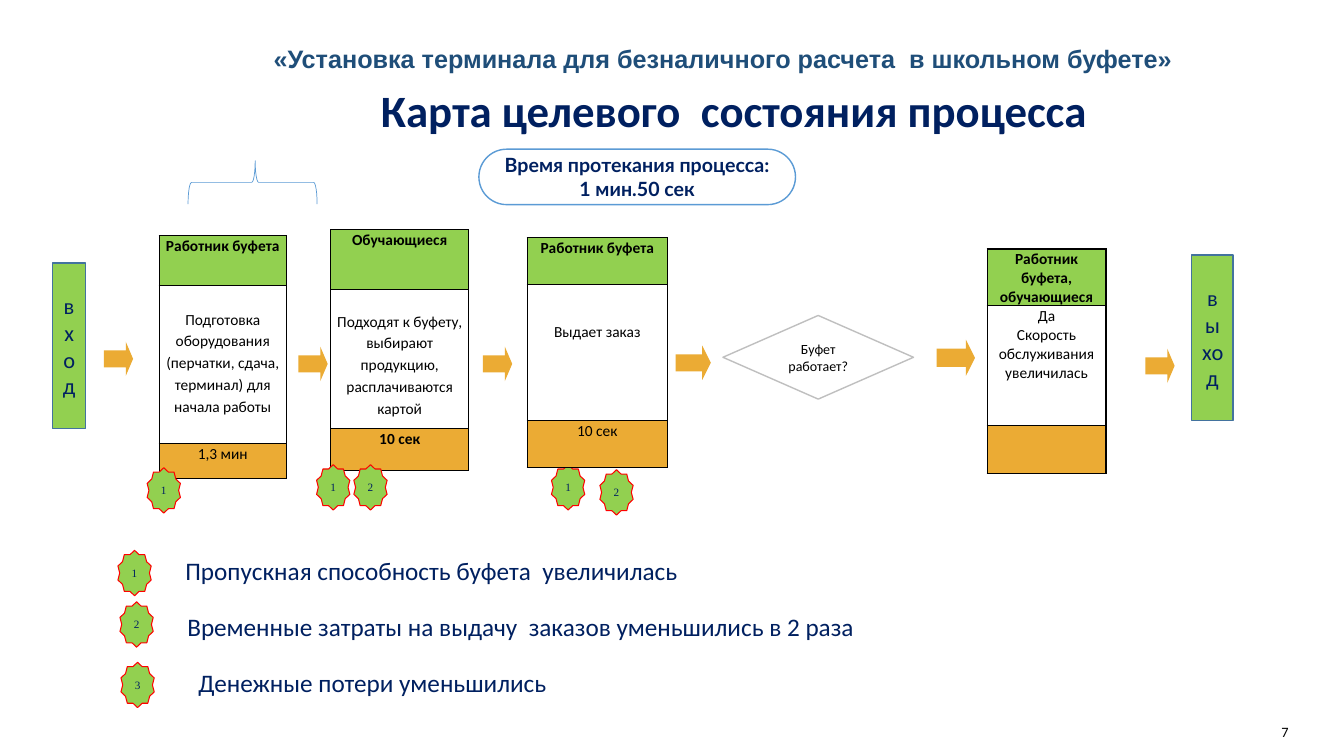
from lxml.etree import SubElement as Sub
from pptx import Presentation as Deck
from pptx.dml.color import RGBColor as RGB
from pptx.enum.shapes import MSO_SHAPE as Kind
from pptx.enum.text import MSO_ANCHOR as Anchor, PP_ALIGN as Align
from pptx.oxml.ns import qn
from pptx.util import Inches, Pt

NAVY = RGB(0x00, 0x20, 0x60)
STEEL = RGB(0x1F, 0x4E, 0x79)
BLUE = RGB(0x5B, 0x9B, 0xD5)
EDGE = RGB(0x43, 0x73, 0x9E)
GREEN = RGB(0x92, 0xD0, 0x50)
GOLD = RGB(0xEB, 0xAB, 0x34)
GREY = RGB(0xBF, 0xBF, 0xBF)
RED = RGB(0xFF, 0x00, 0x00)
WHITE = RGB(0xFF, 0xFF, 0xFF)
BLACK = RGB(0x00, 0x00, 0x00)


def write(para, text, size, color, font="Calibri", bold=False, align=Align.LEFT):
    para.alignment = align
    run = para.add_run()
    run.text = text
    run.font.name = font
    run.font.size = Pt(size)
    run.font.bold = bold
    run.font.color.rgb = color


def add_text(slide, box, text, size, color, wrap=True, **style):
    frame = slide.shapes.add_textbox(*map(Inches, box)).text_frame
    frame.word_wrap = wrap
    write(frame.paragraphs[0], text, size, color, **style)
    return frame


def set_pad(frame, pad):
    frame.margin_left = frame.margin_right = Inches(pad)
    frame.margin_top = frame.margin_bottom = Inches(pad)


def add_shape(slide, kind, box, fill=None, line=None, width=1, adjust=()):
    shape = slide.shapes.add_shape(kind, *map(Inches, box))
    shape.shadow.inherit = False
    for index, value in enumerate(adjust):
        shape.adjustments[index] = value
    if fill is None:
        shape.fill.background()
    else:
        shape.fill.solid()
        shape.fill.fore_color.rgb = fill
    if line is None:
        shape.line.fill.background()
    else:
        shape.line.color.rgb = line
        shape.line.width = Pt(width)
    return shape


def add_label(shape, text, size, color, **style):
    frame = shape.text_frame
    frame.word_wrap = True
    frame.vertical_anchor = Anchor.MIDDLE
    write(frame.paragraphs[0], text, size, color, align=Align.CENTER, **style)


def add_arrow(slide, left, top, width=0.29, height=0.34):
    add_shape(slide, Kind.RIGHT_ARROW, (left, top, width, height), GOLD, adjust=(0.5, 0.25))


def add_star(slide, left, top, text):
    star = add_shape(slide, Kind.STAR_10_POINT, (left, top, 0.33, 0.45), GREEN, RED, 0.75)
    set_pad(star.text_frame, 0)
    add_label(star, text, 8, NAVY, font="Times New Roman")


def add_gate(slide, box, text):
    gate = add_shape(slide, Kind.RECTANGLE, box, GREEN, EDGE)
    add_label(gate, text, 16, NAVY)


def add_frame(cell):
    props = cell._tc.get_or_add_tcPr()
    for index, side in enumerate(("lnL", "lnR", "lnT", "lnB")):
        line = props.makeelement(qn(f"a:{side}"), {"w": str(Pt(1))})
        props.insert(index, line)
        Sub(Sub(line, qn("a:solidFill")), qn("a:srgbClr"), val=str(BLACK))


def add_step(slide, left, top, width, rows, head, body, time="",
             gap=0.01, space=1.0, bold=False):
    box = map(Inches, (left, top, width, sum(rows)))
    table = slide.shapes.add_table(3, 1, *box).table
    table.first_row = table.horz_banding = False
    parts = (
        (GREEN, [head], True, 0.01, 1.0),
        (WHITE, body, False, gap, space),
        (GOLD, [time], bold, 0.01, 1.0),
    )
    for index, (fill, lines, heavy, pad, pitch) in enumerate(parts):
        table.rows[index].height = Inches(rows[index])
        cell = table.cell(index, 0)
        cell.fill.solid()
        cell.fill.fore_color.rgb = fill
        cell.margin_left = cell.margin_right = Inches(0.04)
        cell.margin_top, cell.margin_bottom = Inches(pad), 0
        add_frame(cell)
        frame = cell.text_frame
        for order, text in enumerate(lines):
            if not text:
                continue
            para = frame.add_paragraph() if order else frame.paragraphs[0]
            para.line_spacing = pitch
            write(para, text, 11, BLACK, bold=heavy, align=Align.CENTER)


def add_head(slide):
    add_text(slide, (2.11, 0.38, 10.12, 0.4),
             "«Установка терминала для безналичного расчета  в школьном буфете»",
             18, STEEL, font="Arial", bold=True, align=Align.CENTER)
    add_text(slide, (3.68, 0.77, 7.28, 0.64), "Карта целевого  состояния процесса",
             32, NAVY, wrap=False, bold=True)
    total = add_shape(slide, Kind.ROUNDED_RECTANGLE, (4.75, 1.48, 3.14, 0.55),
                      WHITE, BLUE, adjust=(0.5,))
    add_label(total, "Время протекания процесса: 1 мин.50 сек", 14, NAVY,
              font="Lato", bold=True)
    brace = add_shape(slide, Kind.LEFT_BRACE, (2.29, 1.17, 0.43, 1.28),
                      line=BLUE, width=0.5, adjust=(0.08, 0.48))
    brace.rotation = 90


def add_flow(slide):
    add_gate(slide, (0.52, 2.61, 0.33, 1.64), "вход")
    add_gate(slide, (11.82, 2.53, 0.41, 1.64), "выход")
    choice = add_shape(slide, Kind.FLOWCHART_DECISION, (7.17, 3.13, 1.89, 0.83), WHITE, GREY)
    add_label(choice, "Буфет работает?", 10, BLACK)
    for left, top in ((1.03, 3.39), (2.96, 3.44), (4.79, 3.44), (11.36, 3.46)):
        add_arrow(slide, left, top)
    add_arrow(slide, 6.7, 3.43, 0.35)
    add_arrow(slide, 9.29, 3.37, 0.38, 0.36)
    add_star(slide, 5.47, 4.61, "1")
    add_step(slide, 1.58, 2.34, 1.26, (0.49, 1.57, 0.35), "Работник буфета",
             ["Подготовка оборудования (перчатки, сдача,", "терминал) для начала работы"],
             "1,3 мин", gap=0.22, space=1.15)
    add_step(slide, 3.28, 2.28, 1.37, (0.59, 1.38, 0.42), "Обучающиеся",
             ["Подходят к буфету, выбирают продукцию, расплачиваются картой"],
             "10 сек", gap=0.2, space=1.15, bold=True)
    add_step(slide, 5.23, 2.36, 1.39, (0.46, 1.35, 0.47), "Работник буфета",
             ["Выдает заказ"], "10 сек", gap=0.35, space=1.15)
    add_step(slide, 9.79, 2.47, 1.18, (0.51, 1.19, 0.48), "Работник буфета, обучающиеся",
             ["Да", "Скорость обслуживания увеличилась"])
    for left, top, text in ((1.46, 4.64, "1"), (3.14, 4.61, "1"),
                            (3.51, 4.61, "2"), (5.95, 4.66, "2")):
        add_star(slide, left, top, text)


def add_gains(slide):
    gains = (
        (1.17, 5.46, 1.74, 5.46, "Пропускная способность буфета  увеличилась"),
        (1.19, 5.97, 1.76, 6.02, "Временные затраты на выдачу  заказов уменьшились в 2 раза"),
        (1.2, 6.57, 1.87, 6.57, "Денежные потери уменьшились"),
    )
    for number, (mark, high, left, top, text) in enumerate(gains, 1):
        add_star(slide, mark, high, str(number))
        add_text(slide, (left, top, 7.43, 0.4), text, 18, NAVY)


def main():
    deck = Deck()
    deck.slide_width, deck.slide_height = Inches(13.33), Inches(7.5)
    slide = deck.slides.add_slide(deck.slide_layouts[6])
    add_head(slide)
    add_flow(slide)
    add_gains(slide)
    page = add_text(slide, (12.71, 7.18, 0.31, 0.17), "7", 10.2, BLACK, wrap=False)
    set_pad(page, 0)
    page.vertical_anchor = Anchor.MIDDLE
    deck.save("out.pptx")


if __name__ == "__main__":
    main()
